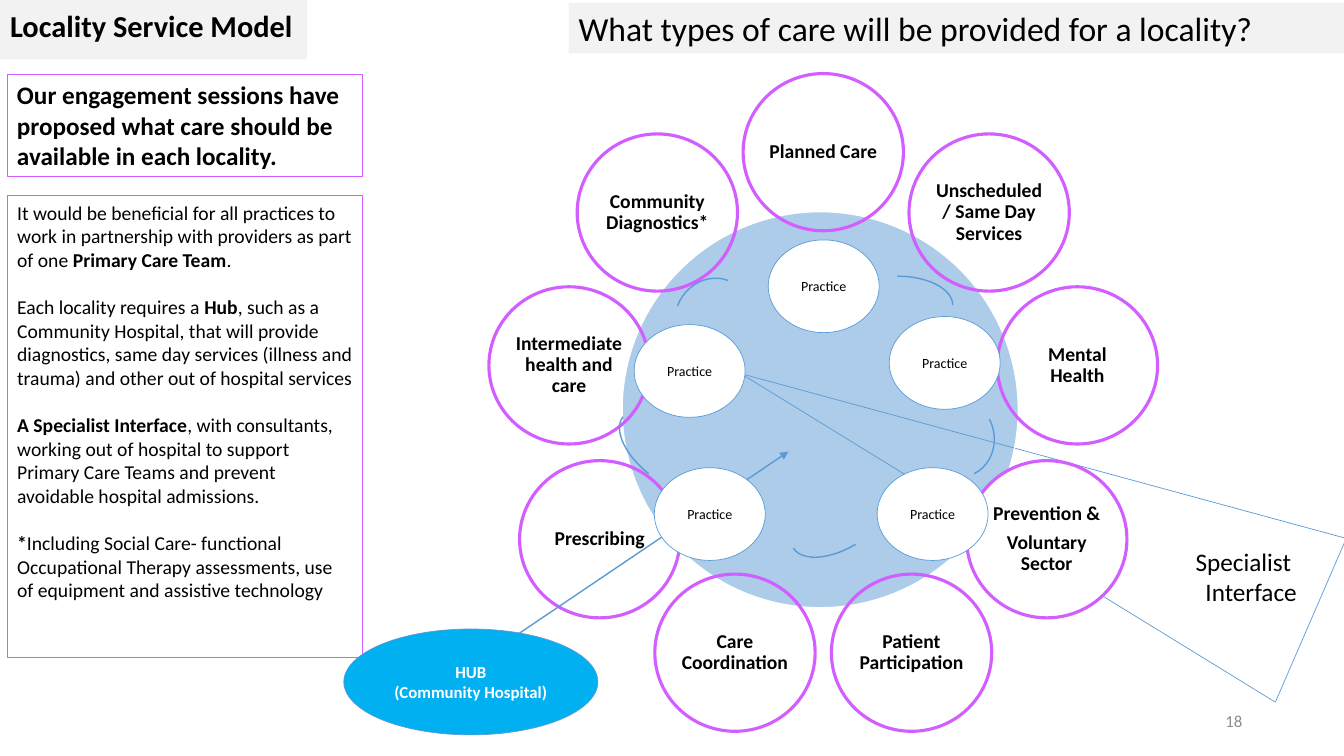
from math import cos, radians, sin

from lxml.etree import SubElement
from pptx import Presentation
from pptx.dml.color import RGBColor
from pptx.enum.shapes import MSO_CONNECTOR as Connector, MSO_SHAPE as Shape
from pptx.enum.text import MSO_ANCHOR as Anchor, MSO_AUTO_SIZE as AutoSize, PP_ALIGN as Align
from pptx.oxml.ns import qn
from pptx.util import Inches, Pt

BLACK, WHITE, GREY, PALE = "000000", "FFFFFF", "8C8C8C", "F2F2F2"
PURPLE, BLUE, HUB_BLUE = "D35EFF", "5B9BD5", "00B0F0"

CARE_TYPES = [
    ["Planned Care"],
    ["Unscheduled / Same Day Services"],
    ["Mental Health"],
    ["Prevention &", "Voluntary Sector"],
    ["Patient Participation"],
    ["Care Coordination"],
    ["Prescribing"],
    ["Intermediate health and care"],
    ["Community Diagnostics*"],
]
RING_CENTRE, RING_RADIUS = (81.65, 40.7), 25.6
CARE_WIDTH, CARE_HEIGHT = 15.9, 15.6

PRACTICES = [(64.9, 46.4), (87, 46.4), (62.9, 32.2), (76.2, 23.8), (88.2, 31.4)]
ARCS = [  # box, rotation
    ((83.5, 27.4, 11, 5.7), 0),
    ((90.6, 39.5, 8.3, 7.6), 63.1),
    ((77.9, 48.7, 11, 5.7), 149.1),
    ((60.6, 41.9, 11, 5.7), 218.3),
    ((66.6, 27.9, 8.3, 7.6), 290.7),
]

# Bars switch between regular and bold.
SERVICE_NOTES = [
    "It would be beneficial for all practices to work in partnership with providers "
    "as part of one |Primary Care Team|.",
    "Each locality requires a |Hub|, such as a Community Hospital, that will provide "
    "diagnostics, same day services (illness and trauma) and other out of hospital services",
    "|A Specialist Interface|, with consultants, working out of hospital to support "
    "Primary Care Teams and prevent avoidable hospital admissions.",
    "|*|Including Social Care- functional Occupational Therapy assessments, use of "
    "equipment and assistive technology",
]


def colour(value):
    return RGBColor.from_string(value)


def set_attributes(target, values):
    for name, value in values.items():
        setattr(target, name, value)


class SlideBuilder:
    """Draws on one slide; boxes are (left, top, width, height) in grid cells."""

    font_name = "Calibri"
    cell = Inches(0.1)

    def __init__(self, slide):
        self.slide = slide

    def grid(self, *cells):
        return [round(count * self.cell) for count in cells]

    def paint(self, shape, fill=None, line=None, line_width=0.5):
        if fill:
            shape.fill.solid()
            shape.fill.fore_color.rgb = colour(fill)
        else:
            shape.fill.background()
        if line:
            shape.line.color.rgb = colour(line)
            shape.line.width = Pt(line_width)
        else:
            shape.line.fill.background()

    def add_lines(self, shape, lines, size, text_colour=BLACK, bold=False, align=Align.LEFT,
                  anchor=Anchor.MIDDLE, inset=None, wrap=True, line_spacing=1.0, gap=0):
        frame = shape.text_frame
        set_attributes(frame, {"word_wrap": wrap, "auto_size": AutoSize.NONE,
                               "vertical_anchor": anchor})
        if inset is not None:
            sides = ("left", "top", "right", "bottom")
            set_attributes(frame, {f"margin_{side}": Inches(inset) for side in sides})
        for index, line in enumerate(lines):
            paragraph = frame.add_paragraph() if index else frame.paragraphs[0]
            is_last = index == len(lines) - 1
            set_attributes(paragraph, {"alignment": align, "line_spacing": line_spacing,
                                       "space_before": Pt(0),
                                       "space_after": Pt(0 if is_last else gap)})
            for part, text in enumerate(line.split("|")):
                if text:
                    run = paragraph.add_run()
                    run.text = text
                    set_attributes(run.font, {"name": self.font_name, "size": Pt(size),
                                              "bold": bold or part % 2 == 1})
                    run.font.color.rgb = colour(text_colour)

    def placeholder(self, index, box, lines, size, paint=None, **text):
        shape = self.slide.placeholders[index]
        set_attributes(shape, dict(zip(("left", "top", "width", "height"), self.grid(*box))))
        self.paint(shape, **(paint or {}))
        self.add_lines(shape, lines, size, **text)
        return shape

    def plain_list(self, *arguments, **options):
        """Fills a body placeholder without bullets or indents."""
        shape = self.placeholder(*arguments, **options)
        for paragraph in shape.text_frame.paragraphs:
            properties = paragraph._p.get_or_add_pPr()
            properties.set("marL", "0")
            properties.set("indent", "0")
            SubElement(properties, qn("a:buNone"))

    def shape(self, kind, box, lines=(), size=14, rotation=0, paint=None, **text):
        shape = self.slide.shapes.add_shape(kind, *self.grid(*box))
        shape.shadow.inherit = False
        shape.rotation = rotation
        self.paint(shape, **(paint or {}))
        if lines:
            self.add_lines(shape, lines, size, **text)
        return shape

    def text_box(self, box, lines, size, **text):
        self.add_lines(self.slide.shapes.add_textbox(*self.grid(*box)), lines, size, **text)

    def arrow(self, start, end, line, width):
        connector = self.slide.shapes.add_connector(Connector.STRAIGHT, *self.grid(*start, *end))
        connector.line.color.rgb = colour(line)
        connector.line.width = Pt(width)
        properties = connector._element.spPr
        SubElement(properties.find(qn("a:ln")), qn("a:tailEnd"), type="triangle")
        SubElement(properties, qn("a:effectLst"))


def make_translucent(shape, percent):
    fill = shape._element.spPr.find(qn("a:solidFill"))
    SubElement(fill[0], qn("a:alpha"), val=str(percent * 1000))


def add_panels(builder):
    panel = {"line": PURPLE, "line_width": 0.75}
    builder.placeholder(0, (0, 0, 30.5, 5.9), ["Locality Service Model"], 21.7,
                        paint={"fill": PALE}, bold=True, line_spacing=0.7)
    builder.shape(Shape.RECTANGLE, (56.4, 0.3, 77, 5),
                  ["What types of care will be provided for a locality?"], 24,
                  paint={"fill": PALE}, anchor=Anchor.TOP)
    builder.shape(Shape.RECTANGLE, (0.7, 7.4, 35.3, 10.1),
                  ["Our engagement sessions have proposed what care should be "
                   "available in each locality."], 18,
                  paint=panel, bold=True, anchor=Anchor.TOP)
    builder.plain_list(1, (0.7, 19.4, 35.3, 45.8), SERVICE_NOTES, 14,
                       paint=panel, anchor=Anchor.TOP, gap=17)


def add_care_ring(builder):
    disc = builder.shape(Shape.OVAL, (61.7, 21, 39.3, 39.3),
                         paint={"fill": BLUE, "line": WHITE, "line_width": 1})
    make_translucent(disc, 50)
    for index, lines in enumerate(CARE_TYPES):
        angle = radians(index * 360 / len(CARE_TYPES))
        left = RING_CENTRE[0] + RING_RADIUS * sin(angle) - CARE_WIDTH / 2
        top = RING_CENTRE[1] - RING_RADIUS * cos(angle) - CARE_HEIGHT / 2
        fill = WHITE if "Prevention &" in lines else None
        builder.shape(Shape.OVAL, (left, top, CARE_WIDTH, CARE_HEIGHT), lines, 14,
                      paint={"fill": fill, "line": PURPLE, "line_width": 2.25},
                      bold=True, align=Align.CENTER, inset=0.02, line_spacing=0.9, gap=5)


def add_practices(builder):
    for left, top in PRACTICES:
        builder.shape(Shape.OVAL, (left, top, 11, 9.2), ["Practice"], 10,
                      paint={"fill": WHITE, "line": BLUE}, align=Align.CENTER)
    for box, rotation in ARCS:
        builder.shape(Shape.ARC, box, rotation=rotation,
                      paint={"line": BLUE, "line_width": 1})


def main():
    presentation = Presentation()
    presentation.slide_width, presentation.slide_height = Inches(13.33), Inches(7.5)
    builder = SlideBuilder(presentation.slides.add_slide(presentation.slide_layouts[1]))

    add_panels(builder)
    interface = builder.shape(Shape.ISOSCELES_TRIANGLE, (92.9, 18.5, 17.7, 61.6),
                              rotation=293.4, paint={"line": BLUE})
    interface.adjustments[0] = 0.5
    add_care_ring(builder)
    builder.arrow((47.4, 65.6), (78.2, 44.8), BLUE, 1)
    add_practices(builder)
    builder.shape(Shape.OVAL, (34.1, 62.4, 25.2, 10.5), ["HUB", "(Community Hospital)"], 12,
                  paint={"fill": HUB_BLUE, "line": BLUE},
                  text_colour=WHITE, bold=True, align=Align.CENTER)
    builder.text_box((117.4, 53.7, 12.2, 7.1), ["Specialist ", "Interface"], 18,
                     align=Align.RIGHT, anchor=Anchor.TOP, wrap=False)
    builder.text_box((94.2, 69.5, 30, 4), ["18"], 12, text_colour=GREY, align=Align.RIGHT)

    presentation.save("out.pptx")


if __name__ == "__main__":
    main()
